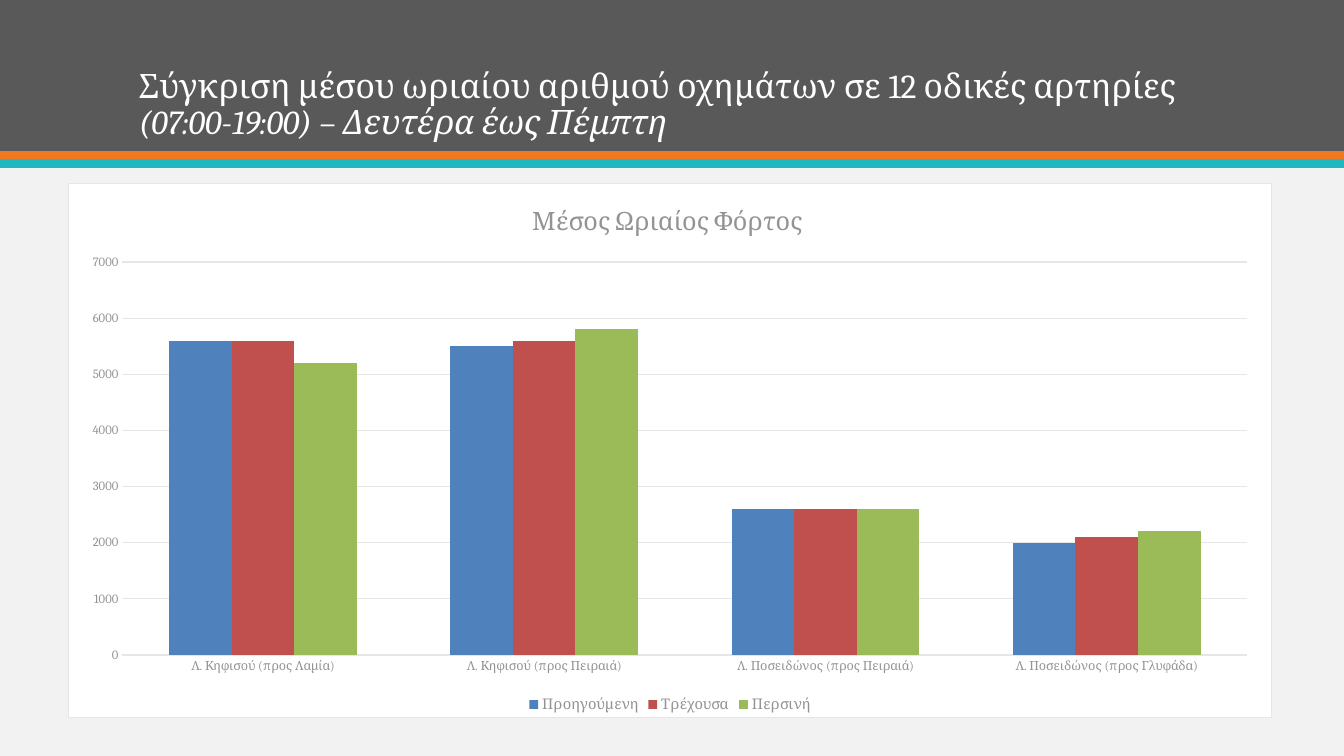
from dataclasses import dataclass

import pptx
import pptx.chart.data
import pptx.dml.color
import pptx.enum.chart
import pptx.enum.shapes
import pptx.enum.text
import pptx.oxml
import pptx.oxml.ns
import pptx.util

PX = 914400 / 100.8


@dataclass(frozen=True)
class Theme:
    font: str = "Cambria"
    background: str = "F2F2F2"
    header: str = "595959"
    orange: str = "EF7920"
    teal: str = "1EB8C1"
    white: str = "FFFFFF"
    muted: str = "939393"
    grid: str = "E6E6E6"
    series: tuple = ("4F81BD", "C0504D", "9BBB59")
    title_size: float = 24
    chart_title_size: float = 18
    legend_size: float = 10.5
    chart_size: float = 10
    axis_size: float = 9
    line_width: float = 0.75


THEME = Theme()

ROADS = (
    "Λ. Κηφισού (προς Λαμία)",
    "Λ. Κηφισού (προς Πειραιά)",
    "Λ. Ποσειδώνος (προς Πειραιά)",
    "Λ. Ποσειδώνος (προς Γλυφάδα)",
)
TRAFFIC = {
    "Προηγούμενη": (5600, 5500, 2600, 2000),
    "Τρέχουσα": (5600, 5600, 2600, 2100),
    "Περσινή": (5200, 5800, 2600, 2200),
}


def px(n):
    return pptx.util.Emu(round(n * PX))


def box(*lengths):
    return [px(n) for n in lengths]


def rgb(color):
    return pptx.dml.color.RGBColor.from_string(color)


def paint(fill, color):
    fill.solid()
    fill.fore_color.rgb = rgb(color)


def style_font(font, size, color):
    font.name = THEME.font
    font.size = pptx.util.Pt(size)
    font.bold = False
    font.color.rgb = rgb(color)


def add_band(slide, top, height, color):
    sp = slide.shapes.add_shape(
        pptx.enum.shapes.MSO_SHAPE.RECTANGLE, *box(0, top, 1344, height))
    sp.shadow.inherit = False
    paint(sp.fill, color)
    sp.line.fill.background()


def add_title(slide, plain, italic):
    tf = slide.shapes.add_textbox(*box(129, 0, 1107, 147)).text_frame
    tf.word_wrap = True
    tf.vertical_anchor = pptx.enum.text.MSO_ANCHOR.BOTTOM
    p = tf.paragraphs[0]
    p.line_spacing = 0.9
    style_font(p.font, THEME.title_size, THEME.white)
    p.add_run().text = plain
    r = p.add_run()
    r.text = italic
    r.font.italic = True


def frame_chart(chart):
    sp_pr = pptx.oxml.parse_xml(
        f'<c:spPr {pptx.oxml.ns.nsdecls("c", "a")}>'
        f'<a:solidFill><a:srgbClr val="{THEME.white}"/></a:solidFill>'
        f'<a:ln w="{pptx.util.Pt(THEME.line_width)}"><a:solidFill>'
        f'<a:srgbClr val="{THEME.grid}"/></a:solidFill></a:ln></c:spPr>')
    chart.element.find(pptx.oxml.ns.qn("c:chart")).addnext(sp_pr)


def style_axis(axis):
    axis.major_tick_mark = pptx.enum.chart.XL_TICK_MARK.NONE
    axis.minor_tick_mark = pptx.enum.chart.XL_TICK_MARK.NONE
    axis.format.line.fill.background()
    style_font(axis.tick_labels.font, THEME.axis_size, THEME.muted)


def add_traffic_chart(slide, title):
    data = pptx.chart.data.CategoryChartData()
    data.categories = ROADS
    for name, values in TRAFFIC.items():
        data.add_series(name, values)
    chart = slide.shapes.add_chart(
        pptx.enum.chart.XL_CHART_TYPE.COLUMN_CLUSTERED,
        *box(68, 183, 1204, 535), data).chart
    style_font(chart.font, THEME.chart_size, THEME.header)
    frame_chart(chart)

    chart.has_title = True
    p = chart.chart_title.text_frame.paragraphs[0]
    p.text = title
    style_font(p.font, THEME.chart_title_size, THEME.muted)
    chart.chart_title.include_in_layout = False

    chart.has_legend = True
    chart.legend.position = pptx.enum.chart.XL_LEGEND_POSITION.BOTTOM
    chart.legend.include_in_layout = False
    style_font(chart.legend.font, THEME.legend_size, THEME.muted)

    style_axis(chart.category_axis)
    style_axis(chart.value_axis)
    chart.value_axis.minimum_scale = 0
    chart.value_axis.maximum_scale = 7000
    chart.value_axis.major_unit = 1000
    grid = chart.value_axis.major_gridlines.format.line
    grid.color.rgb = rgb(THEME.grid)
    grid.width = pptx.util.Pt(THEME.line_width)

    plot = chart.plots[0]
    plot.vary_by_categories = False
    plot.gap_width = 150
    plot.overlap = 0
    for series, color in zip(plot.series, THEME.series):
        paint(series.format.fill, color)


def main():
    prs = pptx.Presentation()
    prs.slide_width, prs.slide_height = box(1344, 756)
    s = prs.slides.add_slide(prs.slide_layouts[6])
    paint(s.background.fill, THEME.background)
    add_band(s, 0, 151, THEME.header)
    add_band(s, 151, 9, THEME.orange)
    add_band(s, 159, 9, THEME.teal)
    add_title(s, "Σύγκριση μέσου ωριαίου αριθμού οχημάτων σε 12 οδικές αρτηρίες ",
              "(07:00-19:00) – Δευτέρα έως Πέμπτη")
    add_traffic_chart(s, "Μέσος Ωριαίος Φόρτος ")
    prs.save("out.pptx")


if __name__ == "__main__":
    main()
